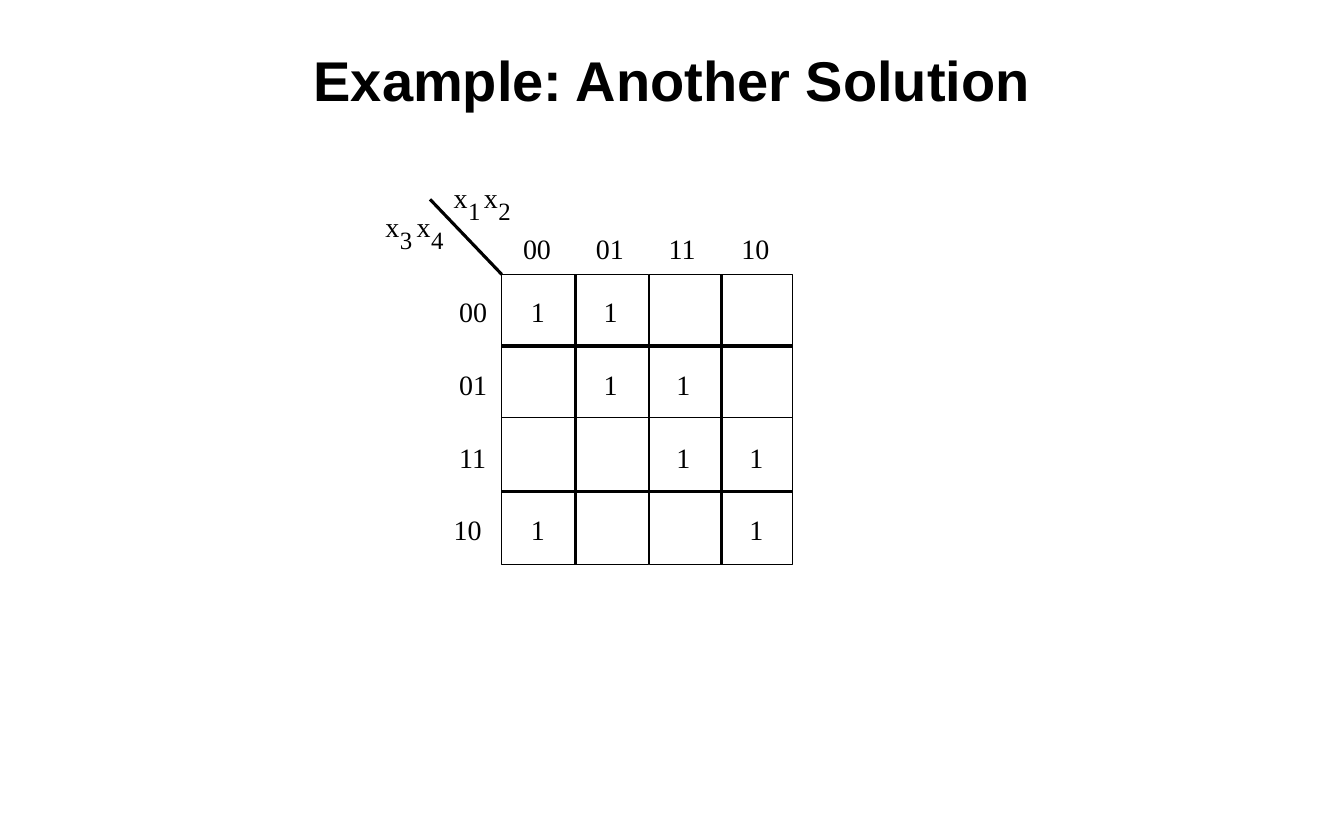
"""Build a slide with a four-variable Karnaugh map."""
from dataclasses import dataclass

from lxml import etree
from pptx import Presentation
from pptx.dml.color import RGBColor
from pptx.enum.shapes import MSO_CONNECTOR, MSO_SHAPE
from pptx.enum.text import MSO_ANCHOR, MSO_AUTO_SIZE, PP_ALIGN
from pptx.oxml.ns import qn
from pptx.util import Inches, Pt

RECTANGLE = MSO_SHAPE.RECTANGLE
STRAIGHT = MSO_CONNECTOR.STRAIGHT
MIDDLE = MSO_ANCHOR.MIDDLE
GROW = MSO_AUTO_SIZE.SHAPE_TO_FIT_TEXT
CENTER = PP_ALIGN.CENTER
TOP, LEFT, BOTTOM, RIGHT = range(4)


@dataclass(frozen=True)
class Theme:
    ink: RGBColor = RGBColor(0, 0, 0)
    title_font: str = "Arial"
    map_font: str = "Times New Roman"
    title_size: int = 36
    label_size: int = 18
    index_size: int = 16
    hairline: int = 0


theme = Theme()
MAP_LEFT, MAP_TOP, STEP = 4.48, 2.45, 0.65
CODES = ["00", "01", "11", "10"]
KARNAUGH_ROWS = ["11  ", " 11 ", "  11", "1  1"]
COLUMN_SPANS = [(MAP_LEFT, 1.31), (5.8, 1.28)]
ROW_SPANS = [(MAP_TOP, 1.28), (3.73, 1.31)]
VARIABLES = [("1", 4.05, 1.61), ("2", 4.32, 1.61), ("3", 3.44, 1.87), ("4", 3.72, 1.87)]


def add_label(text, left, top, width, size=theme.label_size):
    box = slide.shapes.add_textbox(Inches(left), Inches(top), Inches(width), Pt(size * 1.2))
    frame = box.text_frame
    frame.margin_left = frame.margin_top = frame.margin_right = frame.margin_bottom = 0
    frame.word_wrap = False
    frame.auto_size = GROW
    para = frame.paragraphs[0]
    para.text = text
    para.font.name = theme.map_font
    para.font.size = Pt(size)
    para.font.color.rgb = theme.ink


def add_line(left, top, right, bottom):
    line = slide.shapes.add_connector(
        STRAIGHT, Inches(left), Inches(top), Inches(right), Inches(bottom))
    line.line.color.rgb = theme.ink
    line.line.width = Pt(theme.hairline)
    etree.SubElement(line._element.spPr, qn("a:effectLst"))
    return line


deck = Presentation()
deck.slide_width, deck.slide_height = Inches(12), Inches(7.5)
slide = deck.slides.add_slide(deck.slide_layouts[6])

title = slide.shapes.add_textbox(0, Inches(0.33), deck.slide_width, Inches(0.75))
title.text_frame.word_wrap = True
title.text_frame.vertical_anchor = MIDDLE
para = title.text_frame.paragraphs[0]
para.text = "Example: Another Solution"
para.alignment = CENTER
para.font.name = theme.title_font
para.font.size = Pt(theme.title_size)
para.font.bold = True
para.font.color.rgb = theme.ink

for top, height in ROW_SPANS:
    for left, width in COLUMN_SPANS:
        quadrant = slide.shapes.add_shape(
            RECTANGLE, Inches(left), Inches(top), Inches(width), Inches(height))
        quadrant.shadow.inherit = False
        quadrant.fill.background()
        quadrant.line.color.rgb = theme.ink
        quadrant.line.width = Pt(theme.hairline)
        middle_x, middle_y = left + width / 2, top + height / 2
        for start, end, ends in [
            (RIGHT, LEFT, (left + width, middle_y, left, middle_y)),
            (BOTTOM, TOP, (middle_x, top + height, middle_x, top)),
        ]:
            divider = add_line(*ends)
            divider.begin_connect(quadrant, start)
            divider.end_connect(quadrant, end)

add_line(MAP_LEFT - 0.64, MAP_TOP - 0.67, MAP_LEFT, MAP_TOP)

for index, left, top in VARIABLES:
    add_label("x", left, top, 0.19)
    add_label(index, left + 0.13, top + 0.14, 0.17, theme.index_size)

for number, (code, ones) in enumerate(zip(CODES, KARNAUGH_ROWS)):
    row_top = MAP_TOP + 0.18 + number * STEP
    add_label(code, MAP_LEFT + 0.19 + number * STEP, MAP_TOP - 0.38, 0.25)
    add_label(code, MAP_LEFT - (0.43 if code == "10" else 0.38), row_top, 0.25)
    for column, value in enumerate(ones):
        if value == "1":
            add_label(value, MAP_LEFT + 0.26 + column * STEP, row_top, 0.19)

deck.save("out.pptx")
